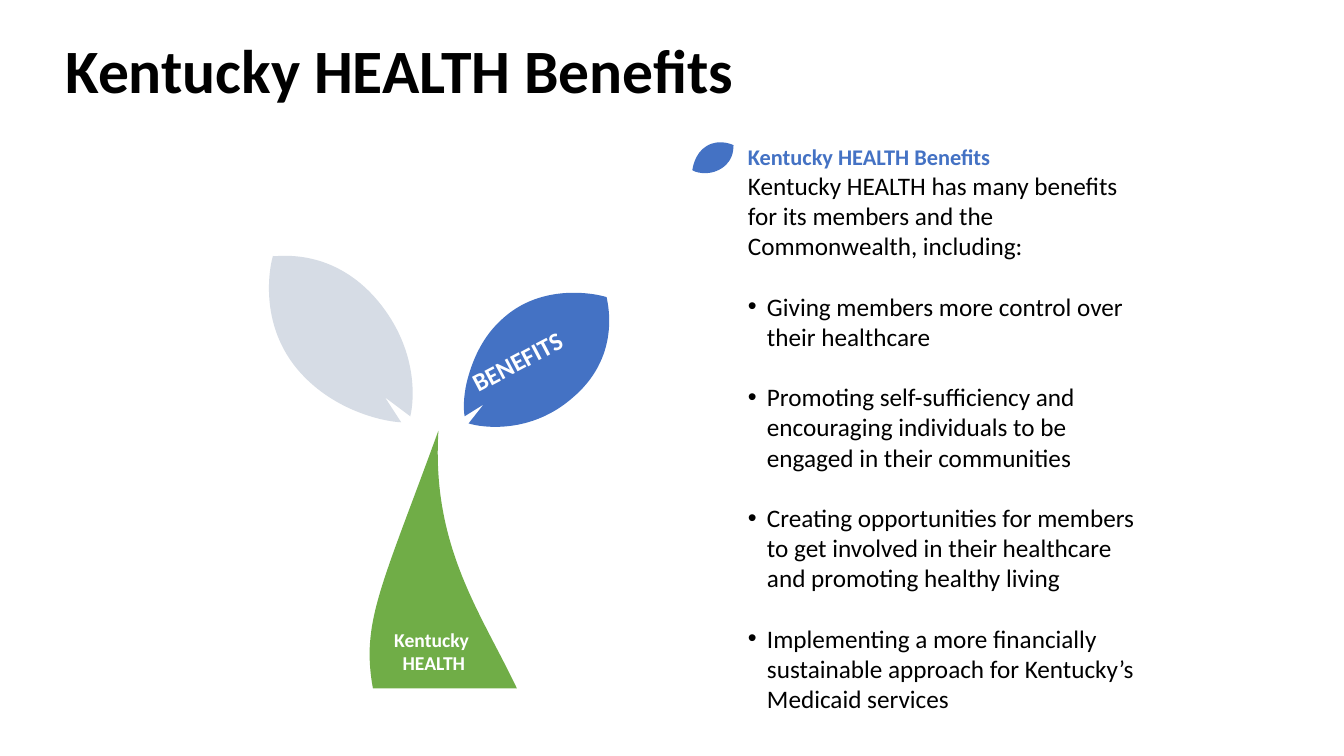
from math import cos, radians, sin

from lxml.etree import SubElement
from pptx import Presentation
from pptx.dml.color import RGBColor
from pptx.enum.text import MSO_ANCHOR as Anchor, PP_ALIGN as Align
from pptx.oxml.ns import qn
from pptx.util import Cm, Pt

BLACK = RGBColor(0x00, 0x00, 0x00)
WHITE = RGBColor(0xFF, 0xFF, 0xFF)
BLUE = RGBColor(0x44, 0x72, 0xC4)
GREY = RGBColor(0xD6, 0xDC, 0xE5)
GREEN = RGBColor(0x70, 0xAD, 0x47)

deck = Presentation()
deck.slide_width, deck.slide_height = Cm(33.87), Cm(19.05)
page = deck.slides.add_slide(deck.slide_layouts[6])


def add_box(left, top, width, height, anchor=Anchor.MIDDLE, inset=0):
    box = page.shapes.add_textbox(Cm(left), Cm(top), Cm(width), Cm(height))
    frame = box.text_frame
    frame.word_wrap = True
    frame.vertical_anchor = anchor
    frame.margin_left = frame.margin_right = Cm(inset)
    frame.margin_top = frame.margin_bottom = Cm(inset / 2)
    return box


def style(font, size, color, bold=False):
    font.name = "Calibri"
    font.size = Pt(size)
    font.bold = bold
    font.color.rgb = color


title = add_box(1.4, 0.89, 31.09, 1.93, inset=0.25).text_frame.paragraphs[0]
title.text = "Kentucky HEALTH Benefits"
title.line_spacing = 0.9
style(title.font, 44, BLACK, True)

left_leaf = [
    (6.88, 6.45),
    (6.86, 6.5, 8.33, 6.15, 9.53, 7.59),
    (10.54, 8.81, 10.44, 10.08, 10.34, 10.49),
    (9.7, 10.01),
    (10.11, 10.64),
    (9.65, 10.62, 8.36, 10.34, 7.49, 9.3),
    (6.43, 8.03, 6.86, 6.48, 6.88, 6.45),
]
benefits_leaf = [
    (11.76, 9.65),
    (11.89, 9.12, 12.14, 8.48, 12.7, 8),
    (13.79, 7.04, 15.27, 7.47, 15.29, 7.49),
    (15.27, 7.49, 15.72, 8.89, 14.48, 9.98),
    (13.39, 10.97, 12.12, 10.77, 11.81, 10.67),
    (12.19, 10.19),
    (11.71, 10.49),
    (11.68, 10.31, 11.68, 10.01, 11.76, 9.65),
]
stem = [
    (11.05, 10.85),
    (9.63, 14.76, 9.09, 15.67, 9.4, 17.35),
    (13.03, 17.35),
    (12.12, 15.44, 10.87, 13.77, 11.05, 10.85),
]
heading_leaf = [
    (17.45, 4.29),
    (17.45, 4.27, 17.5, 3.86, 17.81, 3.68),
    (18.14, 3.48, 18.49, 3.66, 18.49, 3.66),
    (18.47, 3.66, 18.54, 4.01, 18.19, 4.24),
    (17.83, 4.47, 17.48, 4.32, 17.45, 4.29),
]

for outline, left, top, width, height, rotation, color in [
    (left_leaf, 5.92, 7.16, 5.31, 2.67, 230.1, GREY),
    (benefits_leaf, 11.18, 7.72, 4.7, 2.67, 318.1, BLUE),
    (stem, 9.09, 10.85, 3.92, 6.5, 0, GREEN),
    (heading_leaf, 17.37, 3.63, 1.22, 0.69, 327.4, BLUE),
]:
    right, bottom = left + width, top + height
    builder = page.shapes.build_freeform(Cm(left), Cm(top))
    builder.add_line_segments([(Cm(right), Cm(top)), (Cm(right), Cm(bottom))])
    shape = builder.convert_to_shape()
    shape.rotation = rotation
    shape.shadow.inherit = False
    shape.fill.solid()
    shape.fill.fore_color.rgb = color
    shape.line.fill.background()

    path = next(shape._element.iter(qn("a:path")))
    for step in list(path):
        path.remove(step)
    cosine, sine = cos(radians(rotation)), sin(radians(rotation))
    for index, segment in enumerate(outline):
        kind = "a:cubicBezTo" if len(segment) == 6 else "a:lnTo"
        step = SubElement(path, qn(kind if index else "a:moveTo"))
        for x, y in zip(segment[::2], segment[1::2]):
            across, down = x - left - width / 2, y - top - height / 2
            point = SubElement(step, qn("a:pt"))
            point.set("x", str(Cm(across * cosine + down * sine + width / 2)))
            point.set("y", str(Cm(down * cosine - across * sine + height / 2)))
    SubElement(path, qn("a:close"))

body = add_box(18.85, 3.61, 10.08, 15.39, Anchor.TOP).text_frame
intro = body.paragraphs[0]
heading = intro.add_run()
heading.text = "Kentucky HEALTH Benefits"
style(heading.font, 16, BLUE, True)
intro.add_line_break()
span = intro.add_run()
span.text = ("Kentucky HEALTH has many benefits for its members "
             "and the Commonwealth, including:")
style(span.font, 18, BLACK)

for benefit in [
    "Giving members more control over their healthcare",
    "Promoting self-sufficiency and encouraging individuals to be engaged "
    "in their communities",
    "Creating opportunities for members to get involved in their healthcare "
    "and promoting healthy living",
    "Implementing a more financially sustainable approach for Kentucky’s "
    "Medicaid services",
]:
    para = body.add_paragraph()
    para.text = benefit
    para.space_before = Pt(21.5)
    properties = para._p.get_or_add_pPr()
    properties.set("marL", str(Cm(0.48)))
    properties.set("indent", str(-Cm(0.48)))
    SubElement(properties, qn("a:buFont")).set("typeface", "Arial")
    SubElement(properties, qn("a:buChar")).set("char", "•")
    style(para.font, 18, BLACK)

stem_label = add_box(9.32, 15.81, 3.23, 1.19).text_frame
stem_label.text = "Kentucky \nHEALTH"
for para in stem_label.paragraphs:
    para.alignment = Align.CENTER
    style(para.font, 14, WHITE, True)

leaf_label = add_box(11.73, 8.46, 3.58, 0.76)
leaf_label.rotation = 332.2
para = leaf_label.text_frame.paragraphs[0]
para.text = "BENEFITS"
style(para.font, 18, WHITE, True)

deck.save("out.pptx")
